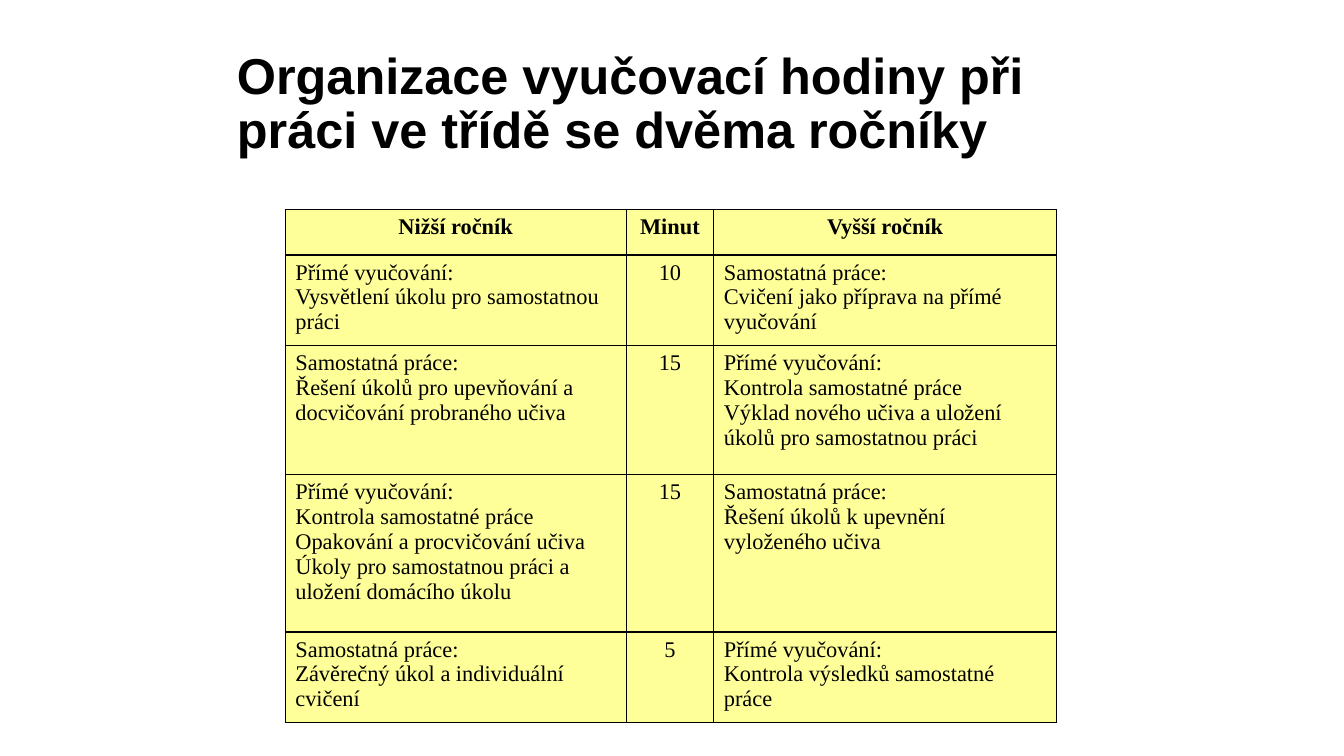
"""Build a slide with the lesson plan of a class with two grades."""

import dataclasses

import lxml.etree
import pptx
import pptx.dml.color
import pptx.enum.text
import pptx.oxml.ns
import pptx.slide
import pptx.table
import pptx.text.text
import pptx.util

Inches = pptx.util.Inches
Align = pptx.enum.text.PP_ALIGN


@dataclasses.dataclass(frozen=True)
class Theme:
    """Colours, fonts and type sizes of the slide."""

    ink: str = "000000"
    fill: str = "FFFF99"
    head_font: str = "Arial"
    head_size: int = 36
    cell_font: str = "Times New Roman"
    cell_size: int = 16
    border: int = 1


@dataclasses.dataclass(frozen=True)
class Row:
    """One row of the plan: both grades, minutes and height in inches."""

    lower: tuple[str, ...]
    time: str
    upper: tuple[str, ...]
    height: float
    header: bool = False


THEME = Theme()
TITLE = "Organizace vyučovací hodiny při práci ve třídě se dvěma ročníky"
DIRECT = "Přímé vyučování:"
SOLO = "Samostatná práce:"
CHECK = "Kontrola samostatné práce"
WIDTHS = (3.38, 0.87, 3.4)
ROWS = (
    Row(("Nižší ročník",), "Minut", ("Vyšší ročník",), 0.45, True),
    Row(
        (DIRECT, "Vysvětlení úkolu pro samostatnou práci"),
        "10",
        (SOLO, "Cvičení jako příprava na přímé vyučování"),
        0.9,
    ),
    Row(
        (SOLO, "Řešení úkolů pro upevňování a docvičování probraného učiva"),
        "15",
        (DIRECT, CHECK, "Výklad nového učiva a uložení úkolů pro samostatnou práci"),
        1.28,
    ),
    Row(
        (
            DIRECT,
            CHECK,
            "Opakování a procvičování učiva",
            "Úkoly pro samostatnou práci a uložení domácího úkolu",
        ),
        "15",
        (SOLO, "Řešení úkolů k upevnění vyloženého učiva"),
        1.56,
    ),
    Row(
        (SOLO, "Závěrečný úkol a individuální cvičení"),
        "5",
        (DIRECT, "Kontrola výsledků samostatné práce"),
        0.9,
    ),
)


def add_run(
    para: pptx.text.text._Paragraph, text: str, font: str, size: int, bold: bool
) -> None:
    """Add one formatted run to a paragraph."""
    run = para.add_run()
    run.text = text
    run.font.name = font
    run.font.size = pptx.util.Pt(size)
    run.font.bold = bold
    run.font.color.rgb = pptx.dml.color.RGBColor.from_string(THEME.ink)


def add_title(slide: pptx.slide.Slide) -> None:
    """Place and fill the title."""
    title = slide.shapes.title
    title.left, title.top = Inches(2.25), Inches(0.42)
    title.width, title.height = Inches(9), Inches(1.25)
    frame = title.text_frame
    frame.word_wrap = True
    frame.auto_size = pptx.enum.text.MSO_AUTO_SIZE.NONE
    frame.vertical_anchor = pptx.enum.text.MSO_ANCHOR.MIDDLE
    para = frame.paragraphs[0]
    para.alignment = Align.LEFT
    para.line_spacing = 0.9
    add_run(para, TITLE, THEME.head_font, THEME.head_size, True)


def add_edges(cell: pptx.table._Cell) -> None:
    """Draw the four borders of a cell."""
    props = cell._tc.get_or_add_tcPr()
    tag = pptx.oxml.ns.qn
    for place, side in enumerate(("a:lnL", "a:lnR", "a:lnT", "a:lnB")):
        line = lxml.etree.Element(tag(side), w=str(pptx.util.Pt(THEME.border)))
        paint = lxml.etree.SubElement(line, tag("a:solidFill"))
        lxml.etree.SubElement(paint, tag("a:srgbClr"), val=THEME.ink)
        props.insert(place, line)


def fill_cell(
    cell: pptx.table._Cell, lines: tuple[str, ...], center: bool, bold: bool
) -> None:
    """Fill a cell with one paragraph per line."""
    cell.fill.solid()
    cell.fill.fore_color.rgb = pptx.dml.color.RGBColor.from_string(THEME.fill)
    cell.margin_left = cell.margin_right = Inches(0.1)
    cell.margin_top = cell.margin_bottom = Inches(0.05)
    add_edges(cell)
    frame = cell.text_frame
    for index, text in enumerate(lines):
        para = frame.add_paragraph() if index else frame.paragraphs[0]
        para.alignment = Align.CENTER if center else Align.LEFT
        add_run(para, text, THEME.cell_font, THEME.cell_size, bold)


def add_plan(slide: pptx.slide.Slide) -> None:
    """Add the table with the lesson plan."""
    height = sum(row.height for row in ROWS)
    table = slide.shapes.add_table(
        len(ROWS),
        len(WIDTHS),
        Inches(2.83),
        Inches(2.08),
        Inches(sum(WIDTHS)),
        Inches(height),
    ).table
    table.horz_banding = False
    table.first_row = False
    for column, width in zip(table.columns, WIDTHS):
        column.width = Inches(width)
    for index, row in enumerate(ROWS):
        table.rows[index].height = Inches(row.height)
        for col, lines in enumerate((row.lower, (row.time,), row.upper)):
            center = row.header or col == 1
            fill_cell(table.cell(index, col), lines, center, row.header)


def main() -> None:
    """Build and save the deck."""
    deck = pptx.Presentation()
    deck.slide_width, deck.slide_height = Inches(13.33), Inches(7.5)
    slide = deck.slides.add_slide(deck.slide_layouts.get_by_name("Title Only"))
    add_title(slide)
    add_plan(slide)
    deck.save("out.pptx")


if __name__ == "__main__":
    main()
